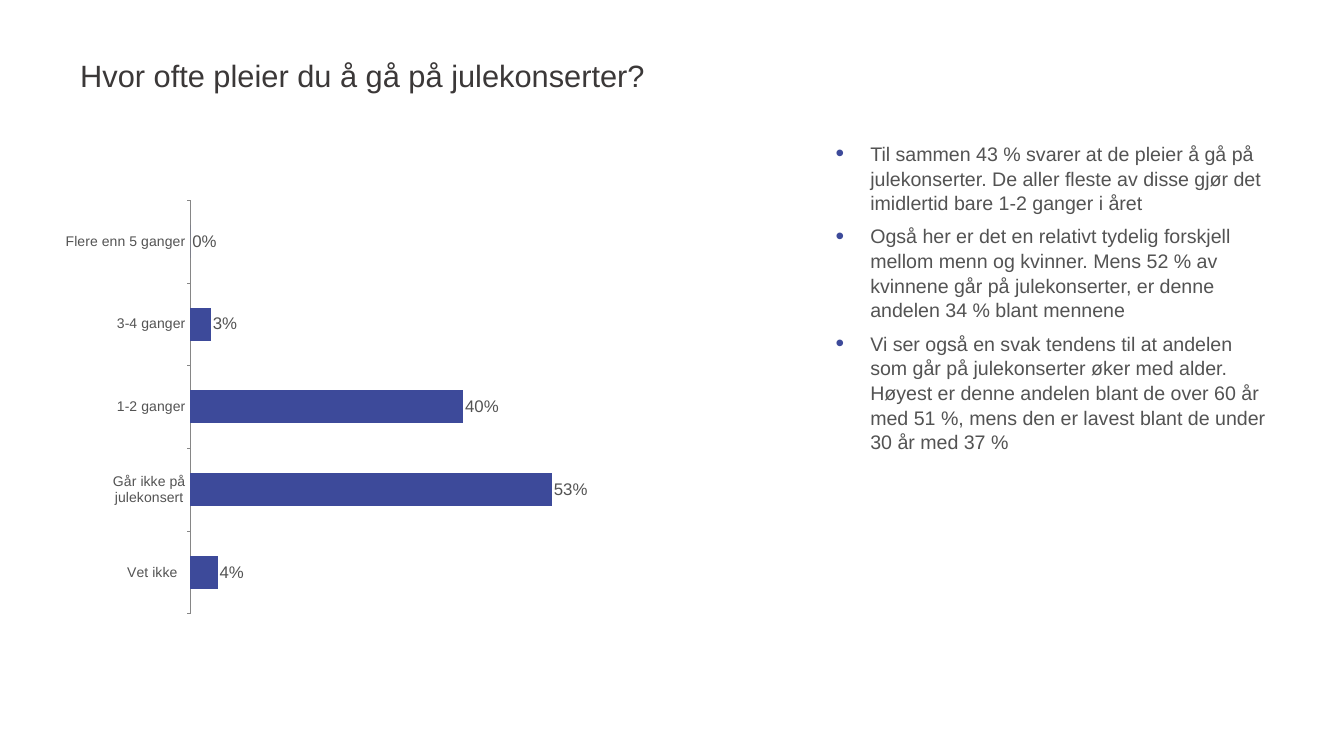
from lxml import etree
from pptx import Presentation
from pptx.chart.data import CategoryChartData
from pptx.dml.color import RGBColor
from pptx.enum.chart import XL_CHART_TYPE, XL_LABEL_POSITION, XL_TICK_MARK
from pptx.enum.text import MSO_ANCHOR
from pptx.oxml.ns import qn
from pptx.util import Inches, Pt

BAR_CLUSTERED = XL_CHART_TYPE.BAR_CLUSTERED
OUTSIDE_END = XL_LABEL_POSITION.OUTSIDE_END
TICK_OUTSIDE = XL_TICK_MARK.OUTSIDE
MIDDLE, TOP = MSO_ANCHOR.MIDDLE, MSO_ANCHOR.TOP

BLUE = RGBColor(0x3D, 0x4A, 0x9A)
TITLE_GREY = RGBColor(0x3B, 0x38, 0x38)
TEXT_GREY = RGBColor(0x53, 0x53, 0x53)
AXIS_GREY = RGBColor(0x86, 0x86, 0x86)

WIDTH, HEIGHT = Inches(26.67), Inches(15)
PERCENT = "0%"

QUESTION = "Hvor ofte pleier du å gå på julekonserter?"
ANSWERS = {
    "Flere enn 5 ganger": 0,
    "3-4 ganger": 0.03,
    "1-2 ganger": 0.4,
    "Går ikke på julekonsert": 0.53,
    "Vet ikke  ": 0.04,
}
FINDINGS = [
    "Til sammen 43 % svarer at de pleier å gå på julekonserter. "
    "De aller fleste av disse gjør det imidlertid bare 1-2 ganger i året",
    "Også her er det en relativt tydelig forskjell mellom menn og kvinner. "
    "Mens 52 % av kvinnene går på julekonserter, er denne andelen 34 % blant mennene",
    "Vi ser også en svak tendens til at andelen som går på julekonserter øker med alder. "
    "Høyest er denne andelen blant de over 60 år med 51 %, "
    "mens den er lavest blant de under 30 år med 37 %",
]


class SlideBuilder:
    """Holds the style and the slide; areas are percentages of the slide's size."""

    font_name = "Arial"
    inset = Inches(0.06)

    def __init__(self, slide):
        self.slide = slide

    def place(self, left, top, width, height):
        return (int(WIDTH * left / 100), int(HEIGHT * top / 100),
                int(WIDTH * width / 100), int(HEIGHT * height / 100))

    def style(self, font, size, color):
        font.name = self.font_name
        font.size = Pt(size)
        font.color.rgb = color

    def text_frame(self, area, anchor):
        frame = self.slide.shapes.add_textbox(*self.place(*area)).text_frame
        frame.word_wrap = True
        frame.vertical_anchor = anchor
        frame.margin_left = frame.margin_right = self.inset
        frame.margin_top = frame.margin_bottom = self.inset
        return frame

    def title(self, text, area):
        paragraph = self.text_frame(area, MIDDLE).paragraphs[0]
        paragraph.text = text
        self.style(paragraph.font, 44, TITLE_GREY)

    def bullets(self, texts, area):
        frame = self.text_frame(area, TOP)
        frame.text = "\n".join(texts)
        for paragraph in frame.paragraphs:
            self.add_bullet(paragraph)
            paragraph.line_spacing = 1.05
            paragraph.space_after = Pt(12)
            self.style(paragraph.font, 28, TEXT_GREY)

    def add_bullet(self, paragraph):
        properties = paragraph._p.get_or_add_pPr()
        properties.set("marL", str(Inches(1.39)))
        properties.set("indent", str(Inches(-0.69)))
        color = etree.SubElement(properties, qn("a:buClr"))
        etree.SubElement(color, qn("a:srgbClr"), val=str(BLUE))
        etree.SubElement(properties, qn("a:buSzPct"), val="125000")
        etree.SubElement(properties, qn("a:buFont"), typeface=self.font_name)
        etree.SubElement(properties, qn("a:buChar"), char="•")

    def bar_chart(self, answers, area, plot_area):
        data = CategoryChartData(number_format=PERCENT)
        data.categories = list(answers)
        data.add_series("Andel", list(answers.values()))
        chart = self.slide.shapes.add_chart(
            BAR_CLUSTERED, *self.place(*area), data).chart
        chart.has_legend = chart.has_title = False
        self.style(chart.font, 20, TEXT_GREY)

        category_axis = chart.category_axis
        category_axis.reverse_order = True
        category_axis.major_tick_mark = TICK_OUTSIDE
        category_axis.format.line.color.rgb = AXIS_GREY
        self.style(category_axis.tick_labels.font, 20, TEXT_GREY)

        value_axis = chart.value_axis
        value_axis.visible = False
        value_axis.has_major_gridlines = False
        value_axis.minimum_scale, value_axis.maximum_scale = 0, 0.6

        plot = chart.plots[0]
        plot.vary_by_categories = False
        plot.gap_width, plot.overlap = 150, -20
        fill = plot.series[0].format.fill
        fill.solid()
        fill.fore_color.rgb = BLUE

        plot.has_data_labels = True
        labels = plot.data_labels
        labels.show_value = True
        labels.number_format = PERCENT
        labels.number_format_is_linked = False
        labels.position = OUTSIDE_END
        self.style(labels.font, 24, TEXT_GREY)
        self.fix_plot_area(chart, plot_area)

    def fix_plot_area(self, chart, shares):
        """Pin the inner plot area to x, y, w and h as shares of the chart."""
        plot_area = chart._chartSpace.chart.plotArea
        for old_layout in plot_area.findall(qn("c:layout")):
            plot_area.remove(old_layout)
        layout = etree.Element(qn("c:layout"))
        plot_area.insert(0, layout)
        manual = etree.SubElement(layout, qn("c:manualLayout"))
        settings = {"layoutTarget": "inner", "xMode": "edge", "yMode": "edge"}
        settings.update(zip("xywh", shares))
        for tag, value in settings.items():
            etree.SubElement(manual, qn(f"c:{tag}"), val=str(value))


def main():
    presentation = Presentation()
    presentation.slide_width, presentation.slide_height = WIDTH, HEIGHT
    blank_layout = presentation.slide_layouts[6]
    builder = SlideBuilder(presentation.slides.add_slide(blank_layout))
    builder.title(QUESTION, (5.74, 3.13, 88.71, 13.6))
    builder.bar_chart(ANSWERS, (4.46, 19.27, 44.13, 72), (0.22, 0.1, 0.69, 0.76))
    builder.bullets(FINDINGS, (59.32, 18.2, 35.06, 72))
    presentation.save("out.pptx")


if __name__ == "__main__":
    main()
